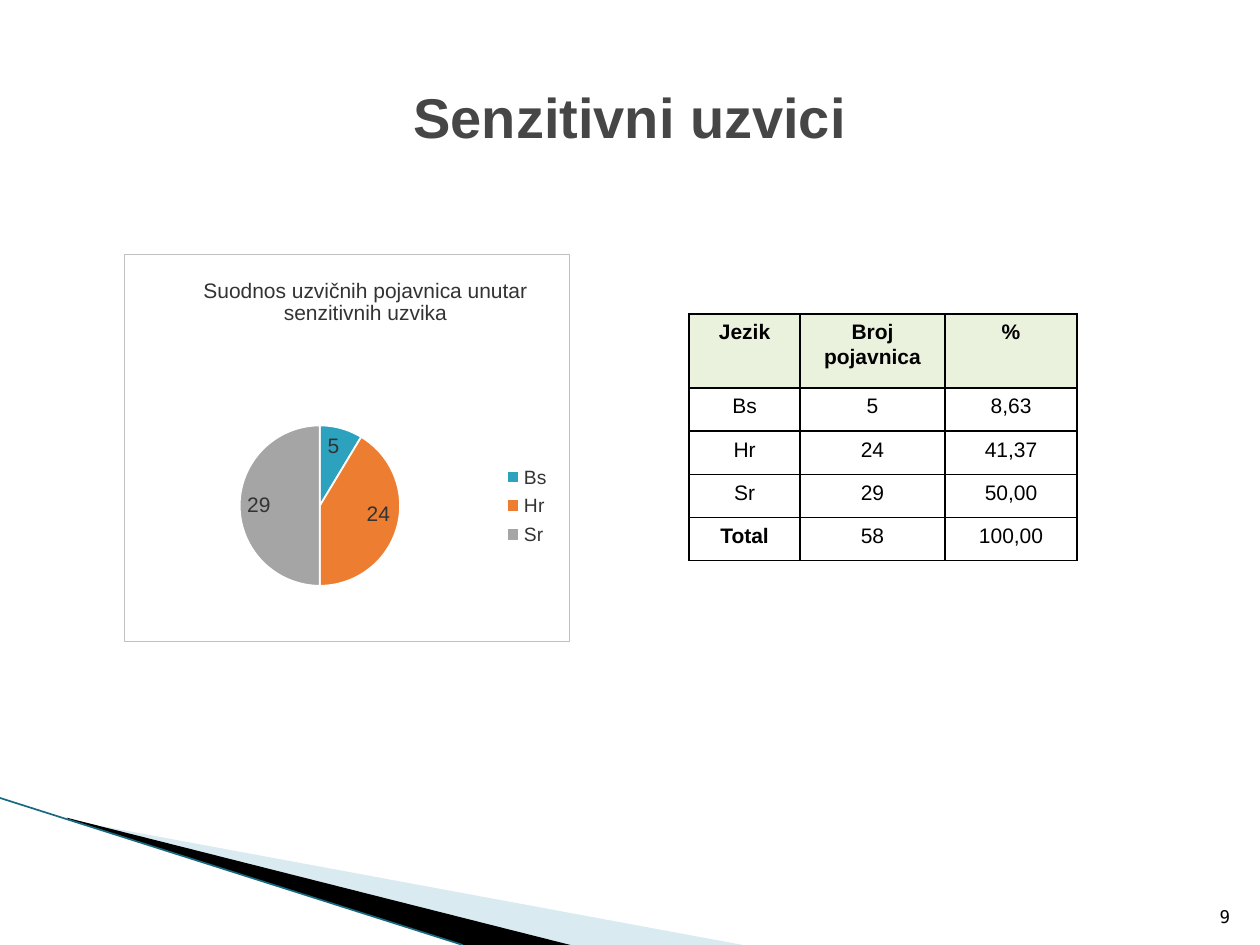
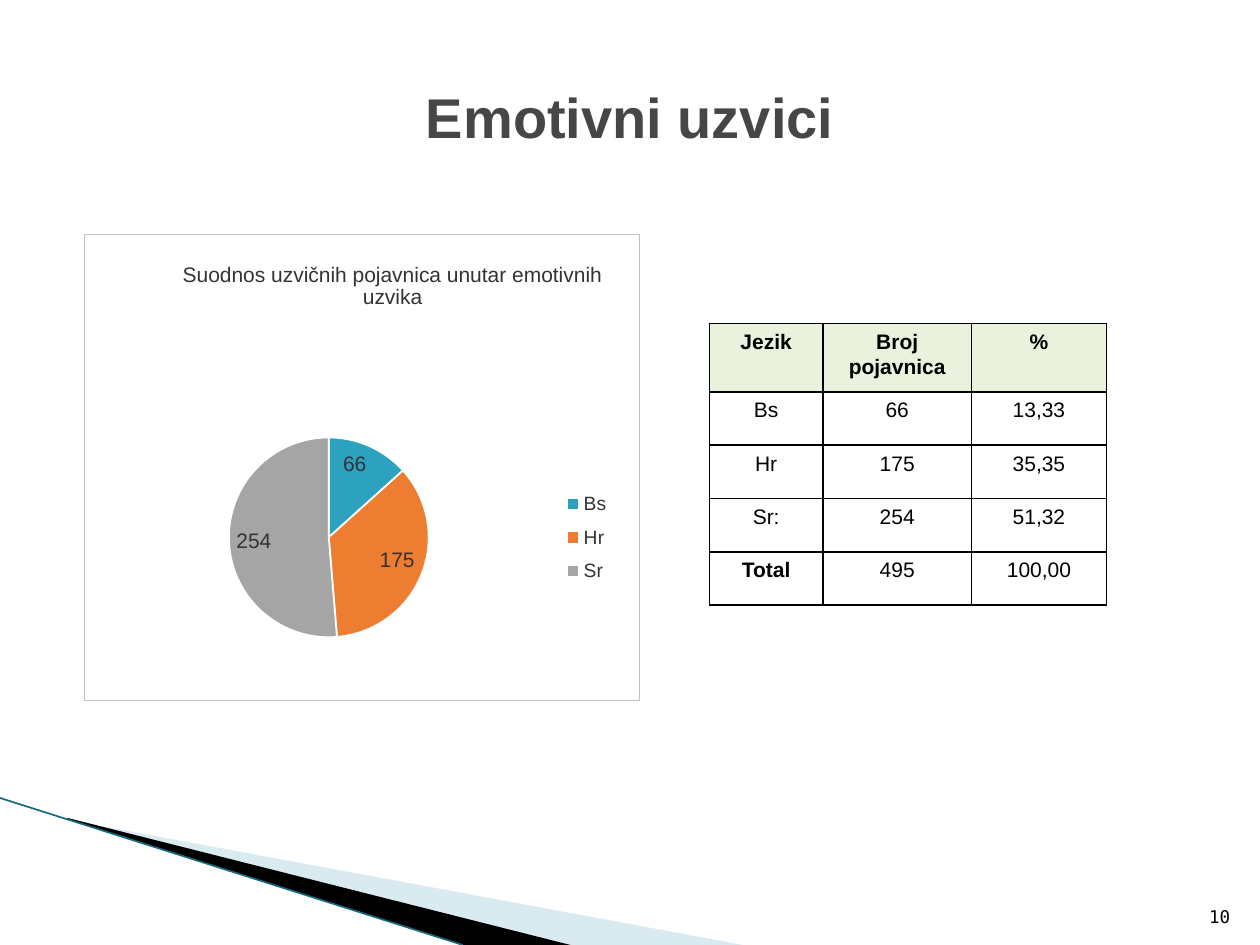
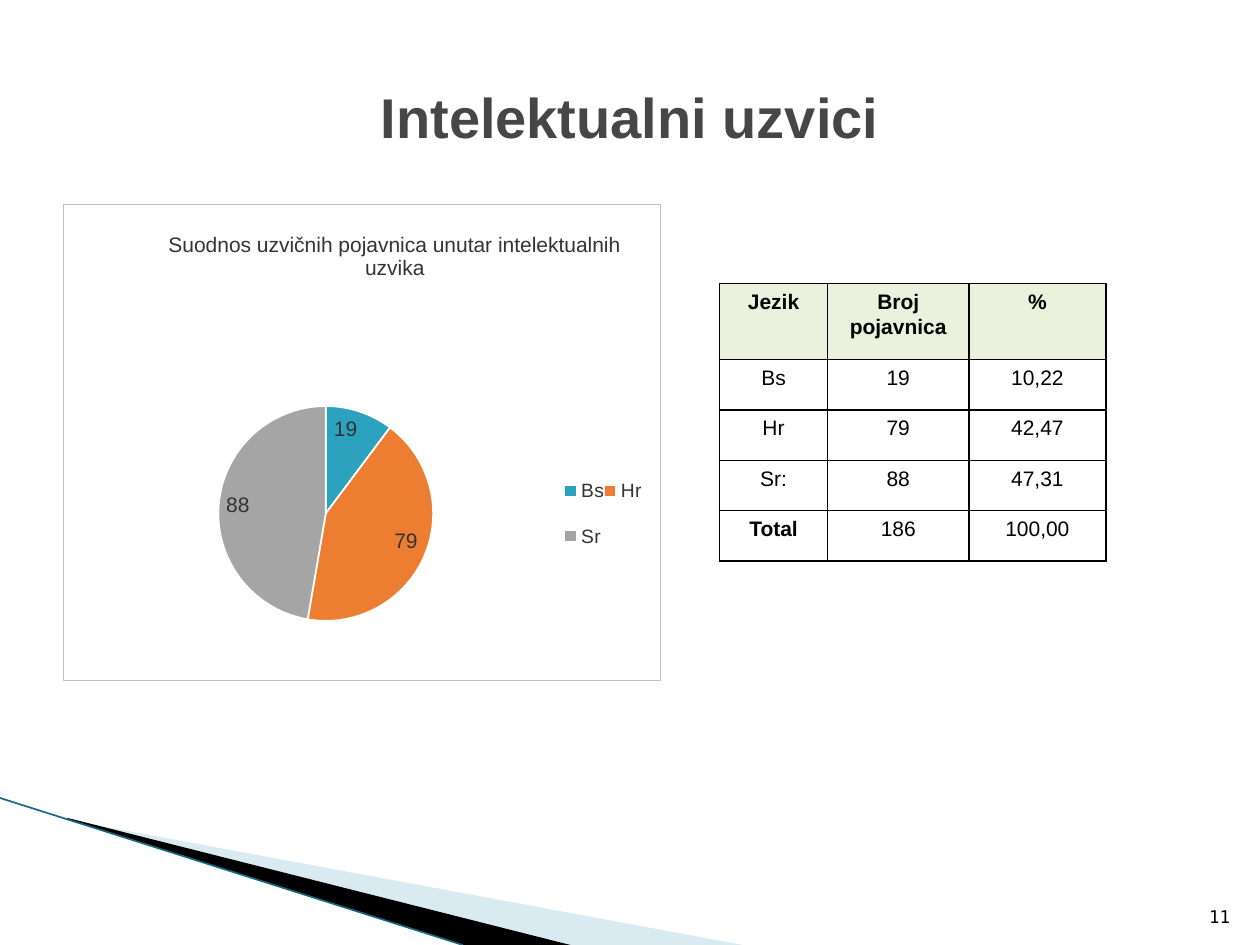
"""Build three slides on interjections, each with a pie chart and a frequency table."""
from lxml.etree import SubElement
from pptx import Presentation
from pptx.chart.data import CategoryChartData
from pptx.dml.color import RGBColor
from pptx.enum.chart import XL_CHART_TYPE, XL_LABEL_POSITION, XL_LEGEND_POSITION
from pptx.enum.shapes import MSO_CONNECTOR
from pptx.enum.text import MSO_ANCHOR, PP_ALIGN
from pptx.oxml import parse_xml
from pptx.oxml.ns import nsdecls, qn
from pptx.util import Pt

LANGUAGES = ["Bs", "Hr", "Sr"]
TABLE_HEADINGS = ["Jezik", "Broj pojavnica", "%"]
FIRST_PAGE = 9

SLIDES = [
    {
        "title": "Senzitivni uzvici",
        "chart_title": "Suodnos uzvičnih pojavnica unutar senzitivnih uzvika",
        "counts": [5, 24, 29],
        "percentages": ["8,63", "41,37", "50,00"],
        "last_language": "Sr",
        "chart_box": (70.6, 145.4, 255, 221),
        "table_corner": (393.8, 179.3),
        "column_widths": [63.4, 82.8, 75.6],
        "row_heights": (42.4, 24.7),
    },
    {
        "title": "Emotivni uzvici",
        "chart_title": "Suodnos uzvičnih pojavnica unutar emotivnih uzvika",
        "counts": [66, 175, 254],
        "percentages": ["13,33", "35,35", "51,32"],
        "last_language": "Sr:",
        "chart_box": (48.2, 134, 317.5, 266.4),
        "table_corner": (405.4, 185),
        "column_widths": [64.8, 85, 77],
        "row_heights": (38.9, 30.5),
    },
    {
        "title": "Intelektualni uzvici",
        "chart_title": "Suodnos uzvičnih pojavnica unutar intelektualnih uzvika",
        "counts": [19, 79, 88],
        "percentages": ["10,22", "42,47", "47,31"],
        "last_language": "Sr:",
        "chart_box": (36, 116.6, 341.3, 272.2),
        "table_corner": (411.1, 162),
        "column_widths": [61.9, 80.6, 78.5],
        "row_heights": (43.4, 28.8),
    },
]


def color(value):
    return RGBColor.from_string(value)


def points(*values):
    return [Pt(value) for value in values]


def apply_format(target, values):
    for name, value in values.items():
        setattr(target, name, value)


def format_font(font, size, value, bold=False, name="Arial"):
    apply_format(font, {"size": Pt(size), "bold": bold, "name": name})
    font.color.rgb = color(value)


def fill_solid(fill, value):
    fill.solid()
    fill.fore_color.rgb = color(value)


def set_layout(parent, position, inner=False, **fractions):
    existing = parent.find(qn("c:layout"))
    if existing is not None:
        parent.remove(existing)
    layout = parse_xml(f"<c:layout {nsdecls('c')}><c:manualLayout/></c:layout>")
    manual = layout[0]
    if inner:
        SubElement(manual, qn("c:layoutTarget")).set("val", "inner")
    for axis in "xy":
        SubElement(manual, qn(f"c:{axis}Mode")).set("val", "edge")
    for name, fraction in fractions.items():
        SubElement(manual, qn(f"c:{name}")).set("val", str(fraction))
    parent.insert(position, layout)


class Deck:
    text = "000000"
    title_text = "464646"
    chart_text = "333333"
    header_fill = "EAF1DD"
    frame = "C0C0C0"
    slices = ["2DA2BF", "ED7D31", "A5A5A5"]
    pale_wedge = "A0CBDC"
    edge = "16697F"

    def __init__(self):
        self.presentation = Presentation()
        apply_format(self.presentation,
                     {"slide_width": Pt(720), "slide_height": Pt(540)})
        self.layout = self.presentation.slide_layouts[5]
        self.slide = None

    def add_slide(self, title):
        self.slide = self.presentation.slides.add_slide(self.layout)
        shape = self.slide.shapes.title
        left, top, width, height = points(36, 21.6, 648, 90)
        apply_format(shape, {"left": left, "top": top, "width": width, "height": height})
        self.put_text(shape.text_frame, title, 32, self.title_text, True)
        shape.text_frame.vertical_anchor = MSO_ANCHOR.MIDDLE

    def put_text(self, frame, text, size, value, bold=False, name="Arial",
                 alignment=PP_ALIGN.CENTER):
        frame.text = text
        paragraph = frame.paragraphs[0]
        paragraph.alignment = alignment
        format_font(paragraph.runs[0].font, size, value, bold, name)
        return paragraph

    def add_wedge(self, corners, value, opacity=100):
        start, *others = [points(*corner) for corner in corners]
        builder = self.slide.shapes.build_freeform(*start, scale=1)
        builder.add_line_segments(others)
        shape = builder.convert_to_shape()
        shape.shadow.inherit = False
        fill_solid(shape.fill, value)
        shape.line.fill.background()
        if opacity < 100:
            tint = shape.element.spPr.find(qn("a:solidFill"))[0]
            SubElement(tint, qn("a:alpha")).set("val", str(opacity * 1000))
        return shape

    def add_line(self, start, end, value, width):
        line = self.slide.shapes.add_connector(
            MSO_CONNECTOR.STRAIGHT, *points(*start), *points(*end))
        line.line.color.rgb = color(value)
        line.line.width = Pt(width)
        SubElement(line.element.spPr, qn("a:effectLst"))
        return line

    def share_corner_band(self):
        band = [
            self.add_wedge([(39.6, 468.7), (424.5, 540), (325, 540), (39.6, 468)],
                           self.pale_wedge, 40),
            self.add_wedge([(38.2, 467.3), (326, 540), (264, 540), (38.9, 468)],
                           self.text),
            self.add_line((0, 456), (264.5, 540), self.edge, 0.95),
        ]
        for position, shape in enumerate(band, 2):
            self.layout.shapes.element.insert(position, shape.element)

    def add_pie(self, title, counts, box):
        data = CategoryChartData()
        data.categories = LANGUAGES
        data.add_series("Series 1", counts)
        chart = self.slide.shapes.add_chart(
            XL_CHART_TYPE.PIE, *points(*box), data).chart
        format_font(chart.font, 11, self.text, name="Calibri")
        self.put_text(chart.chart_title.text_frame, title, 12, self.chart_text)
        chart.has_legend = True
        apply_format(chart.legend, {"position": XL_LEGEND_POSITION.RIGHT,
                                    "include_in_layout": False})
        format_font(chart.legend.font, 11, self.chart_text)
        plot = chart.plots[0]
        plot.vary_by_categories = True
        plot.has_data_labels = True
        apply_format(plot.data_labels, {"show_value": True, "show_percentage": False,
                                        "position": XL_LABEL_POSITION.INSIDE_END})
        format_font(plot.data_labels.font, 12, self.chart_text)
        for index, value in enumerate(self.slices):
            wedge = plot.series[0].points[index].format
            fill_solid(wedge.fill, value)
            wedge.line.color.rgb = color("FFFFFF")
            wedge.line.width = Pt(1)
        self.arrange_chart(chart.element.find(qn("c:chart")))

    def arrange_chart(self, body):
        set_layout(body.find(qn("c:title")), 1, x=0.17, y=0.05)
        set_layout(body.find(qn("c:plotArea")), 0, inner=True,
                   x=0.26, y=0.4, w=0.36, h=0.5)
        set_layout(body.find(qn("c:legend")), 1, x=0.84, y=0.53, w=0.13, h=0.24)
        body.addnext(parse_xml(
            f"<c:spPr {nsdecls('c', 'a')}>"
            '<a:solidFill><a:srgbClr val="FFFFFF"/></a:solidFill>'
            f'<a:ln w="{Pt(0.25)}"><a:solidFill><a:srgbClr val="{self.frame}"/>'
            "</a:solidFill></a:ln></c:spPr>"))

    def add_table(self, rows, corner, widths, heights):
        header_height, row_height = heights
        height = header_height + row_height * (len(rows) - 1)
        table = self.slide.shapes.add_table(
            len(rows), len(widths), *points(*corner, sum(widths), height)).table
        apply_format(table, {"first_row": False, "horz_banding": False})
        for column, width in zip(table.columns, widths):
            column.width = Pt(width)
        for row_index, texts in enumerate(rows):
            is_header = row_index == 0
            table.rows[row_index].height = Pt(header_height if is_header else row_height)
            for column_index, text in enumerate(texts):
                self.fill_cell(table.cell(row_index, column_index), text, is_header,
                               is_header or text == "Total")

    def fill_cell(self, cell, text, is_header, bold):
        for side in ("left", "right", "top", "bottom"):
            setattr(cell, f"margin_{side}", Pt(3))
        self.put_text(cell.text_frame, text, 12, self.text, bold).line_spacing = 1.07
        if is_header:
            fill_solid(cell.fill, self.header_fill)
        else:
            cell.fill.background()
        properties = cell._tc.tcPr
        for position, side in enumerate("LRTB"):
            properties.insert(position, parse_xml(
                f'<a:ln{side} {nsdecls("a")} w="{Pt(1)}"><a:solidFill>'
                f'<a:srgbClr val="{self.text}"/></a:solidFill></a:ln{side}>'))

    def add_page_number(self, number):
        frame = self.slide.shapes.add_textbox(*points(681, 504.7, 29, 28.8)).text_frame
        apply_format(frame, {"word_wrap": True, "vertical_anchor": MSO_ANCHOR.BOTTOM})
        self.put_text(frame, str(number), 10, self.text, name="DejaVu Sans Mono",
                      alignment=PP_ALIGN.RIGHT)


def table_rows(content):
    languages = LANGUAGES[:-1] + [content["last_language"], "Total"]
    counts = content["counts"] + [sum(content["counts"])]
    percentages = content["percentages"] + ["100,00"]
    return [TABLE_HEADINGS, *zip(languages, map(str, counts), percentages)]


def main():
    deck = Deck()
    for page, content in enumerate(SLIDES, FIRST_PAGE):
        deck.add_slide(content["title"])
        if page == FIRST_PAGE:
            deck.share_corner_band()
        deck.add_pie(content["chart_title"], content["counts"], content["chart_box"])
        deck.add_table(table_rows(content), content["table_corner"],
                       content["column_widths"], content["row_heights"])
        deck.add_page_number(page)
    deck.presentation.save("out.pptx")


if __name__ == "__main__":
    main()
